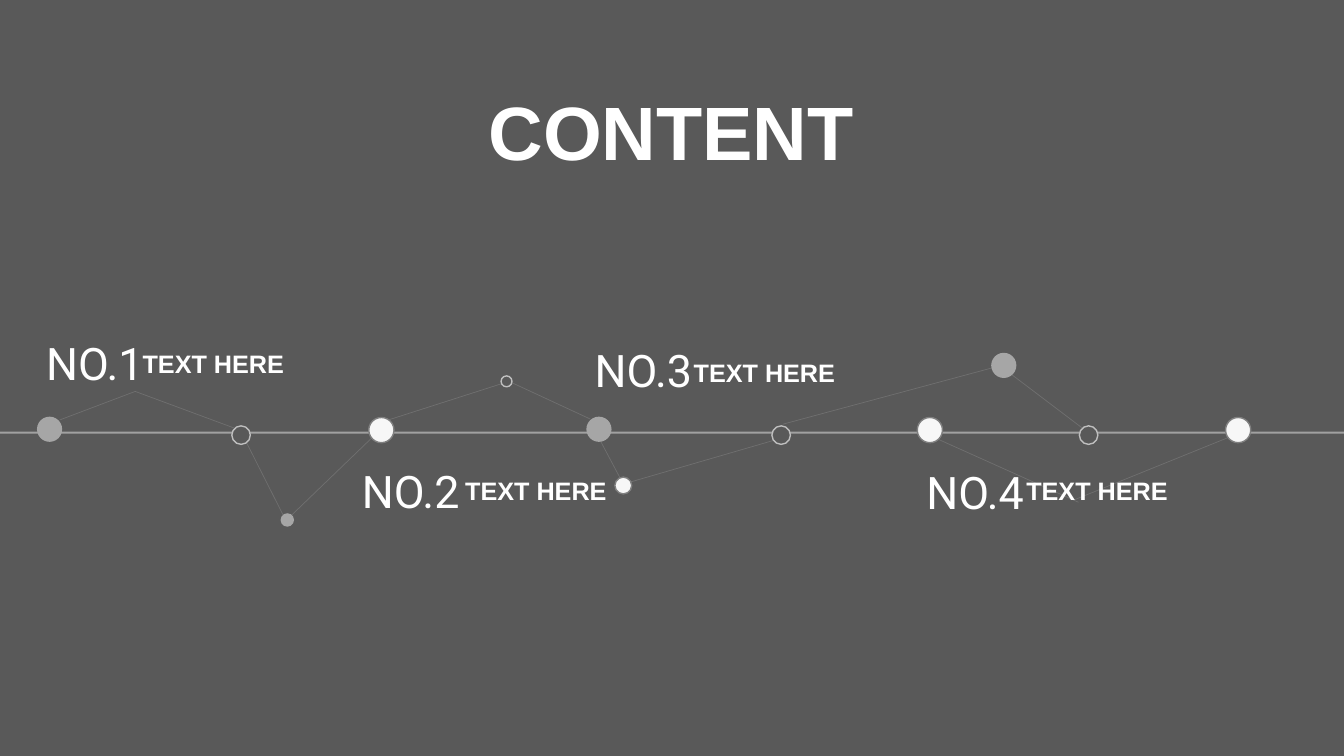
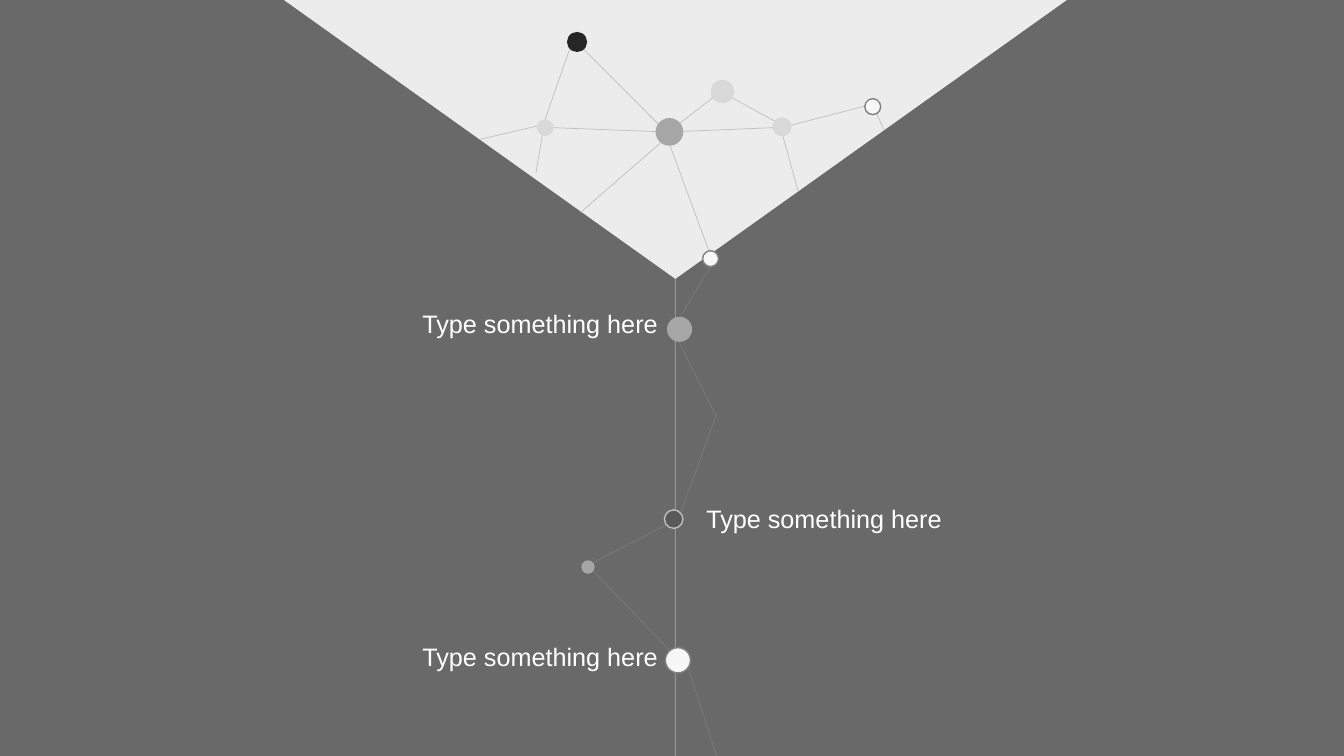
from dataclasses import dataclass
from typing import NamedTuple, Optional

import lxml.etree
import pptx
import pptx.dml.color
import pptx.enum.shapes
import pptx.enum.text
import pptx.oxml.ns
import pptx.presentation
import pptx.shapes.base
import pptx.slide
import pptx.text.text
import pptx.util

SLIDE_WIDTH = pptx.util.Inches(13.33)
SLIDE_HEIGHT = pptx.util.Inches(7.5)
COLUMNS, ROWS = 16, 9
TITLE_ONLY, BLANK = 5, 6


@dataclass(frozen=True)
class Theme:
    contents_ground: str = "595959"
    timeline_ground: str = "696969"
    funnel: str = "ECECEC"
    text: str = "FFFFFF"
    link: str = "BFBFBF"
    link_width: float = 0.5
    outline_width: float = 1
    faint_opacity: int = 21
    axis_opacity: int = 43
    font: str = "Arial"
    number_font: str = "Roboto"
    title_size: int = 54
    number_size: int = 32
    label_size: int = 18


THEME = Theme()


class DotStyle(NamedTuple):
    fill: str
    outline: Optional[str] = None


RING = DotStyle(THEME.contents_ground, THEME.link)
WHITE = DotStyle("F7F7F7", "808080")
GREY = DotStyle("A6A6A6")
PALE = DotStyle("D9D9D9")
BLACK = DotStyle("262626")


class Point(NamedTuple):
    column: float
    row: float


class Area(NamedTuple):
    column: float
    row: float
    columns: float
    rows: float


class Dot(NamedTuple):
    centre: Point
    diameter: float
    style: DotStyle


class Link(NamedTuple):
    start: Point
    end: Point


class Entry(NamedTuple):
    number: str
    number_at: Point
    caption_at: Point


class TextStyle(NamedTuple):
    font: str
    size: int
    bold: bool = False


TITLE = TextStyle(THEME.font, THEME.title_size, True)
NUMBER = TextStyle(THEME.number_font, THEME.number_size)
CAPTION = TextStyle(THEME.font, THEME.label_size, True)
LABEL = TextStyle(THEME.font, THEME.label_size)


def links(*ends: tuple[float, float, float, float]) -> list[Link]:
    return [Link(Point(*end[:2]), Point(*end[2:])) for end in ends]


CONTENTS_AXIS = Link(Point(0, 5.15), Point(COLUMNS, 5.15))
CONTENTS_LINKS = links(
    (0.71, 5, 1.61, 4.66), (1.61, 4.66, 2.8, 5.1),
    (2.93, 5.26, 3.37, 6.13), (3.36, 6.24, 4.43, 5.21),
    (4.56, 5.02, 6.06, 4.54), (7.03, 4.99, 6.08, 4.55),
    (7.09, 5.14, 7.43, 5.78), (9.22, 5.24, 7.43, 5.76),
    (11.81, 4.38, 9.32, 5.05), (12.89, 5.1, 11.86, 4.32),
    (12.84, 5.98, 11.17, 5.23), (14.62, 5.21, 12.79, 5.95),
)
CONTENTS_DOTS = [
    *(Dot(Point(column, 5.18), 0.22, RING) for column in (2.87, 9.3, 12.96)),
    *(Dot(Point(column, 5.11), 0.3, GREY) for column in (0.59, 7.13)),
    *(Dot(Point(column, 5.12), 0.3, WHITE) for column in (4.54, 11.07, 14.74)),
    Dot(Point(3.42, 6.19), 0.16, GREY),
    Dot(Point(6.03, 4.54), 0.13, RING),
    Dot(Point(7.42, 5.78), 0.2, WHITE),
    Dot(Point(11.95, 4.35), 0.3, GREY),
]
ENTRIES = [
    Entry("NO.1", Point(0.43, 3.94), Point(1.58, 4.09)),
    Entry("NO.2", Point(4.19, 5.46), Point(5.42, 5.6)),
    Entry("NO.3", Point(6.96, 4.02), Point(8.14, 4.19)),
    Entry("NO.4", Point(10.91, 5.47), Point(12.1, 5.6)),
]

FUNNEL = Area(3.38, 0, 9.32, 3.32)
TIMELINE_AXIS = Link(Point(8.04, FUNNEL.rows), Point(8.04, ROWS))
TIMELINE_LINKS = links(
    (8.46, 3.17, 8.1, 3.77), (8.08, 4.07, 8.52, 4.94),
    (8.53, 4.93, 8.1, 6.12), (7.93, 6.25, 7.06, 6.7),
    (6.95, 6.68, 7.98, 7.75), (8.17, 7.88, 8.53, 9),
)
NETWORK_LINKS = links(
    (10.52, 1.54, 10.44, 1.36), (9.42, 1.49, 10.31, 1.26),
    (9.22, 1.44, 8.58, 1.09), (8, 1.54, 8.58, 1.09),
    (8, 1.57, 9.2, 1.52), (7.98, 1.74, 8.47, 3.07),
    (6.49, 1.42, 6.78, 0.59), (6.38, 2.06, 6.49, 1.42),
    (5.71, 1.66, 6.44, 1.49), (7.9, 1.54, 6.95, 0.59),
    (7.9, 1.57, 6.59, 1.52), (6.91, 2.53, 7.9, 1.67),
    (9.5, 2.27, 9.32, 1.62),
)
TIMELINE_DOTS = [
    Dot(Point(8.02, 6.18), 0.22, RING),
    Dot(Point(8.09, 3.92), 0.3, GREY),
    Dot(Point(8.07, 7.86), 0.3, WHITE),
    Dot(Point(7, 6.75), 0.16, GREY),
    Dot(Point(8.46, 3.08), 0.19, WHITE),
    Dot(Point(6.49, 1.52), 0.2, PALE),
    Dot(Point(6.87, 0.5), 0.24, BLACK),
    Dot(Point(7.97, 1.57), 0.33, GREY),
    Dot(Point(8.6, 1.09), 0.28, PALE),
    Dot(Point(9.31, 1.51), 0.23, PALE),
    Dot(Point(10.39, 1.27), 0.19, WHITE),
]
TIMELINE_LABELS = [Point(4.91, 3.61), Point(8.29, 5.93), Point(4.91, 7.58)]


def across(columns: float) -> pptx.util.Emu:
    return pptx.util.Emu(round(SLIDE_WIDTH * columns / COLUMNS))


def down(rows: float) -> pptx.util.Emu:
    return pptx.util.Emu(round(SLIDE_HEIGHT * rows / ROWS))


def placed(area: Area) -> tuple[pptx.util.Emu, ...]:
    """Turn a grid area into left, top, width and height."""
    return (across(area.column), down(area.row),
            across(area.columns), down(area.rows))


def rgb(colour: str) -> pptx.dml.color.RGBColor:
    return pptx.dml.color.RGBColor.from_string(colour)


def new_slide(deck: pptx.presentation.Presentation, layout: int,
              ground: str) -> pptx.slide.Slide:
    slide = deck.slides.add_slide(deck.slide_layouts[layout])
    slide.background.fill.solid()
    slide.background.fill.fore_color.rgb = rgb(ground)
    return slide


def write(frame: pptx.text.text.TextFrame, text: str, style: TextStyle,
          wrap: bool) -> None:
    frame.text = text
    frame.word_wrap = wrap
    frame.auto_size = pptx.enum.text.MSO_AUTO_SIZE.NONE
    for run in frame.paragraphs[0].runs:
        run.font.name = style.font
        run.font.size = pptx.util.Pt(style.size)
        run.font.bold = style.bold
        run.font.color.rgb = rgb(THEME.text)


def add_text(slide: pptx.slide.Slide, text: str, area: Area,
             style: TextStyle, wrap: bool = True) -> None:
    write(slide.shapes.add_textbox(*placed(area)).text_frame, text, style, wrap)


def set_title(slide: pptx.slide.Slide, text: str, area: Area) -> None:
    title = slide.shapes.title
    title.left, title.top, title.width, title.height = placed(area)
    write(title.text_frame, text, TITLE, wrap=False)
    title.text_frame.vertical_anchor = pptx.enum.text.MSO_ANCHOR.TOP
    title.text_frame.paragraphs[0].alignment = pptx.enum.text.PP_ALIGN.CENTER


def add_shape(slide: pptx.slide.Slide, kind: pptx.enum.shapes.MSO_SHAPE,
              area: Area, style: DotStyle) -> pptx.shapes.base.BaseShape:
    shape = slide.shapes.add_shape(kind, *placed(area))
    shape.shadow.inherit = False
    shape.fill.solid()
    shape.fill.fore_color.rgb = rgb(style.fill)
    if style.outline:
        shape.line.color.rgb = rgb(style.outline)
        shape.line.width = pptx.util.Pt(THEME.outline_width)
    else:
        shape.line.fill.background()
    return shape


def add_dots(slide: pptx.slide.Slide, dots: list[Dot]) -> None:
    for (column, row), size, style in dots:
        area = Area(column - size / 2, row - size / 2, size, size)
        add_shape(slide, pptx.enum.shapes.MSO_SHAPE.OVAL, area, style)


def add_links(slide: pptx.slide.Slide, joins: list[Link], opacity: int = 100,
              colour: str = THEME.link, width: float = THEME.link_width) -> None:
    """Draw straight lines; opacity is a percentage."""
    qn = pptx.oxml.ns.qn
    for start, end in joins:
        connector = slide.shapes.add_connector(
            pptx.enum.shapes.MSO_CONNECTOR.STRAIGHT,
            across(start.column), down(start.row),
            across(end.column), down(end.row))
        connector.line.color.rgb = rgb(colour)
        connector.line.width = pptx.util.Pt(width)
        properties = connector._element.spPr
        if opacity < 100:
            tint = next(properties.iter(qn("a:srgbClr")))
            lxml.etree.SubElement(tint, qn("a:alpha"), val=str(opacity * 1000))
        lxml.etree.SubElement(properties, qn("a:effectLst"))


def build_contents(deck: pptx.presentation.Presentation) -> None:
    slide = new_slide(deck, TITLE_ONLY, THEME.contents_ground)
    set_title(slide, "CONTENT", Area(5.69, 0.95, 4.6, 1.2))
    add_links(slide, [CONTENTS_AXIS], THEME.axis_opacity, THEME.text, 1.5)
    add_links(slide, CONTENTS_LINKS, THEME.faint_opacity)
    add_dots(slide, CONTENTS_DOTS)
    for entry in ENTRIES:
        add_text(slide, entry.number, Area(*entry.number_at, 2.32, 0.76), NUMBER)
        add_text(slide, "TEXT HERE", Area(*entry.caption_at, 1.92, 0.48),
                 CAPTION, wrap=False)


def build_timeline(deck: pptx.presentation.Presentation) -> None:
    slide = new_slide(deck, BLANK, THEME.timeline_ground)
    funnel = add_shape(slide, pptx.enum.shapes.MSO_SHAPE.ISOSCELES_TRIANGLE,
                       FUNNEL, DotStyle(THEME.funnel))
    funnel.rotation = 180
    add_links(slide, [TIMELINE_AXIS], THEME.axis_opacity, THEME.text)
    add_links(slide, TIMELINE_LINKS, THEME.faint_opacity)
    add_links(slide, NETWORK_LINKS)
    add_dots(slide, TIMELINE_DOTS)
    for corner in TIMELINE_LABELS:
        add_text(slide, "Type something here", Area(*corner, 3.14, 0.48), LABEL)


def main() -> None:
    deck = pptx.Presentation()
    deck.slide_width, deck.slide_height = SLIDE_WIDTH, SLIDE_HEIGHT
    build_contents(deck)
    build_timeline(deck)
    deck.save("out.pptx")


if __name__ == "__main__":
    main()
